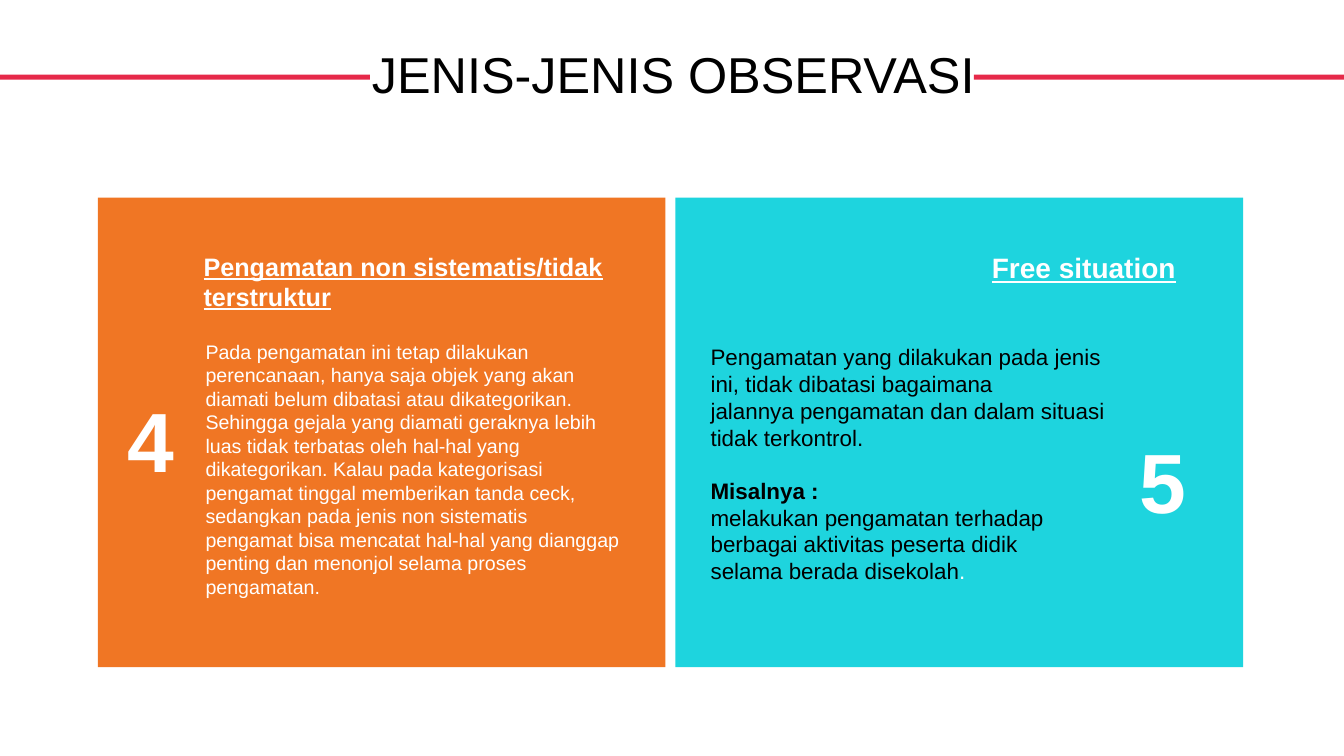
"""Build the slide on kinds of observation: a ruled title above two coloured cards."""
from pptx import Presentation
from pptx import util as u
from pptx.dml.color import RGBColor
from pptx.enum import shapes, text

THEME = {
    "font": "Arial", "white": "FFFFFF", "black": "000000",
    "rule": "E62949", "orange": "F07624", "cyan": "1ED4DE",
    "title": 36, "number": 60,
}
WIDTH, HEIGHT = 13.33, 7.5
RULE_W = 3.67
CARD_X, CARD_Y, CARD_W, CARD_H, CARD_STEP = 0.97, 1.96, 5.63, 4.66, 5.73
LEFT, CENTER, RIGHT = text.PP_ALIGN.LEFT, text.PP_ALIGN.CENTER, text.PP_ALIGN.RIGHT

CARDS = [
    {"fill": "orange", "color": "white", "size": 14,
     "heading": "Pengamatan non sistematis/tidak terstruktur",
     "heading_box": (1.92, 2.44, 4.39, 0.71), "heading_size": 18, "align": LEFT,
     "body_box": (1.94, 3.32, 4.36, 2.54),
     "body": ["Pada pengamatan ini tetap dilakukan perencanaan, hanya saja objek yang akan "
              "diamati belum dibatasi atau dikategorikan. Sehingga gejala yang diamati "
              "geraknya lebih luas tidak terbatas oleh hal-hal yang",
              "dikategorikan. Kalau pada kategorisasi pengamat tinggal memberikan tanda ceck, "
              "sedangkan pada jenis non sistematis",
              "pengamat bisa mencatat hal-hal yang dianggap penting dan menonjol selama "
              "proses pengamatan."],
     "number": "4", "number_box": (1.05, 3.8, 0.89, 1.11)},
    {"fill": "cyan", "color": "black", "size": 16,
     "heading": "Free situation",
     "heading_box": (8.34, 2.44, 3.42, 0.44), "heading_size": 20, "align": RIGHT,
     "body_box": (6.95, 3.36, 4.14, 2.47),
     "body": ["Pengamatan yang dilakukan pada jenis ini, tidak dibatasi bagaimana",
              "jalannya pengamatan dan dalam situasi tidak terkontrol.",
              "Misalnya :",
              "melakukan pengamatan terhadap berbagai aktivitas peserta didik",
              "selama berada disekolah"],
     "number": "5", "number_box": (11.09, 4.21, 0.89, 1.11)},
]


def add_block(x, y, w, h, color):
    sp = slide.shapes.add_shape(shapes.MSO_SHAPE.RECTANGLE, *map(u.Inches, (x, y, w, h)))
    sp.shadow.inherit = False
    sp.fill.solid()
    sp.fill.fore_color.rgb = RGBColor.from_string(THEME[color])
    sp.line.fill.background()


def write(sp, lines, size, color, align=LEFT, bold=None, underline=None):
    tf = sp.text_frame
    tf.word_wrap = True
    tf.text = "\n".join(lines)
    for p in tf.paragraphs:
        p.alignment = align
        for r in p.runs:
            r.font.name, r.font.size = THEME["font"], u.Pt(size)
            r.font.bold, r.font.underline = bold, underline
            r.font.color.rgb = RGBColor.from_string(THEME[color])
    return tf


prs = Presentation()
prs.slide_width, prs.slide_height = u.Inches(WIDTH), u.Inches(HEIGHT)
slide = prs.slides.add_slide(prs.slide_layouts[5])

for x in (0, WIDTH - RULE_W):
    add_block(x, 0.74, RULE_W, 0.05, "rule")

title = slide.shapes.title
title.left, title.top, title.width, title.height = map(u.Inches, (0.35, 0.44, 12.66, 0.65))
tf = write(title, ["JENIS-JENIS OBSERVASI"], THEME["title"], "black", CENTER)
tf.auto_size = text.MSO_AUTO_SIZE.NONE
tf.vertical_anchor = text.MSO_ANCHOR.MIDDLE
tf.paragraphs[0].line_spacing = 0.9
tf.paragraphs[0].space_before = u.Pt(10)

for i, card in enumerate(CARDS):
    add_block(CARD_X + i * CARD_STEP, CARD_Y, CARD_W, CARD_H, card["fill"])
    heading, body, number = (slide.shapes.add_textbox(*map(u.Inches, card[box]))
                             for box in ("heading_box", "body_box", "number_box"))
    write(heading, [card["heading"]], card["heading_size"], "white", card["align"], True, True)
    tf = write(body, card["body"], card["size"], card["color"])
    write(number, [card["number"]], THEME["number"], "white", CENTER, True)

example = tf.paragraphs[2]
example.space_before = u.Pt(18.4)
example.runs[0].font.bold = True
r = tf.paragraphs[-1].add_run()
r.text = "."
r.font.name, r.font.size = THEME["font"], u.Pt(card["size"])
r.font.color.rgb = RGBColor.from_string(THEME["white"])

prs.save("out.pptx")
